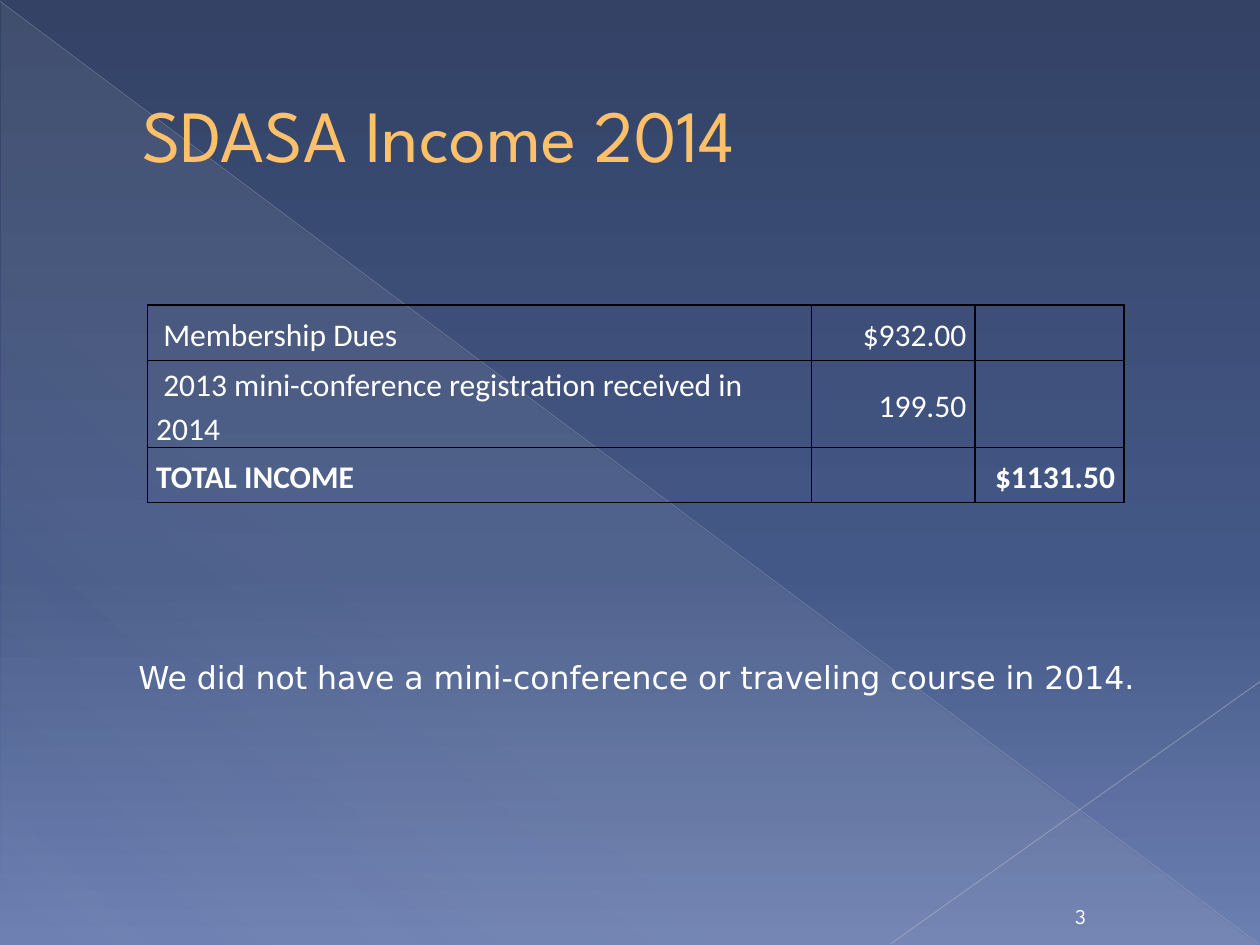
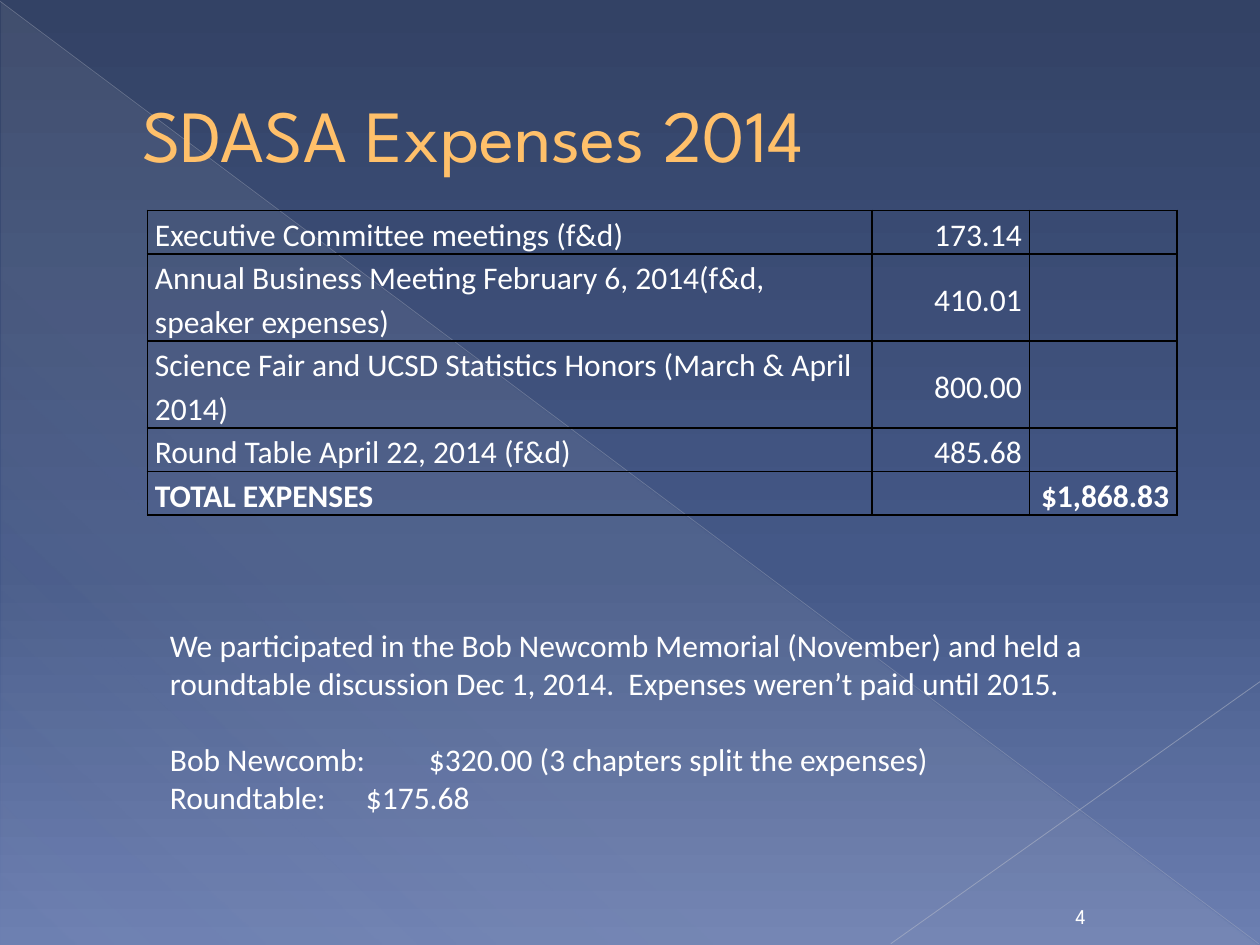
import dataclasses
import typing

import lxml.etree
import pptx
import pptx.dml.color
import pptx.enum.shapes
import pptx.enum.text
import pptx.oxml.ns
import pptx.util

Inches = pptx.util.Inches
Pt = pptx.util.Pt
qn = pptx.oxml.ns.qn
ALIGN = pptx.enum.text.PP_ALIGN
ANCHOR = pptx.enum.text.MSO_ANCHOR
COLORS = {
    "top": "334265", "mid": "445887", "base": "6C7FB1",
    "veil": "D4D4D6", "long": "B9BDC8", "short": "C1C4CE",
    "title": "FFC06A", "edge": "A67800", "text": "FFFFFF", "grid": "000000",
}
BODY, HEAD, NOTE = "Calibri", "League Spartan", "DejaVu Sans"


@dataclasses.dataclass
class Stop:
    place: int
    color: str
    alpha: int = 100


@dataclasses.dataclass
class Ray:
    start: tuple[float, float]
    end: tuple[float, float]
    color: str
    width: float
    alpha: int


@dataclasses.dataclass
class Grid:
    left: float
    top: float
    inset: float
    widths: list[float]
    heights: list[float]
    rows: list[tuple[str, str, str]]


@dataclasses.dataclass
class Note:
    box: tuple[float, float, float, float]
    font: str
    lines: list[str]
    gaps: dict[int, float] = dataclasses.field(default_factory=dict)


@dataclasses.dataclass
class Page:
    title: str
    number: int
    grid: Grid
    note: Note


SKY = [Stop(0, "top"), Stop(60, "mid"), Stop(100, "base")]
VEIL = [Stop(0, "veil", 10), Stop(70, "veil", 8), Stop(100, "veil", 1)]
RAYS = [
    Ray((0, 0.01), (9.99, 7.49), "long", 0.39, 35),
    Ray((10, 5.41), (7.07, 7.49), "short", 0.47, 45),
]

PAGES = [
    Page(
        "SDASA Income 2014", 3,
        Grid(1.17, 2.42, 0.07, [5.27, 1.3, 1.18], [0.44] * 3, [
            (" Membership Dues", "$932.00", ""),
            (" 2013 mini-conference registration received in 2014", "199.50", ""),
            ("TOTAL INCOME", "", "$1131.50"),
        ]),
        Note((1, 5.17, 8.24, 0.4), NOTE,
             ["We did not have a mini-conference or traveling course in 2014."]),
    ),
    Page(
        "SDASA Expenses 2014", 4,
        Grid(1.17, 1.67, 0.06, [5.75, 1.25, 1.17], [0.32, 0.58, 0.58, 0.32, 0.3], [
            ("Executive Committee meetings (f&d)", "173.14", ""),
            ("Annual Business Meeting February 6, 2014(f&d, speaker expenses)", "410.01", ""),
            ("Science Fair and UCSD Statistics Honors (March & April 2014)", "800.00", ""),
            ("Round Table April 22, 2014 (f&d)", "485.68", ""),
            ("TOTAL EXPENSES", "", "$1,868.83"),
        ]),
        Note((1.25, 4.92, 7.59, 1.62), BODY, [
            "We participated in the Bob Newcomb Memorial (November) and held a",
            "roundtable discussion Dec 1, 2014.  Expenses weren’t paid until 2015.",
            "Bob Newcomb:\t $320.00 (3 chapters split the expenses)",
            "Roundtable: \t $175.68",
        ], {2: 22}),
    ),
]


def rgb(name: str) -> pptx.dml.color.RGBColor:
    return pptx.dml.color.RGBColor.from_string(COLORS[name])


def add(root: typing.Any, tag: str, **attrs: object) -> typing.Any:
    return lxml.etree.SubElement(root, qn(tag), {k: str(v) for k, v in attrs.items()})


def tint(root: typing.Any, color: str, alpha: int = 100) -> None:
    node = add(root, "a:srgbClr", val=COLORS[color])
    if alpha < 100:
        add(node, "a:alpha", val=alpha * 1000)


def blend(fill: typing.Any, root: typing.Any, stops: list[Stop], angle: int) -> None:
    """Fill with a gradient of any number of stops."""
    fill.gradient()
    grad = root.find(".//" + qn("a:gradFill"))
    for child in list(grad):
        grad.remove(child)
    group = add(grad, "a:gsLst")
    for stop in stops:
        tint(add(group, "a:gs", pos=stop.place * 1000), stop.color, stop.alpha)
    add(grad, "a:lin", ang=angle * 60000, scaled=0)


def write(frame: typing.Any, lines: list[str], *, font: str = BODY, size: float = 18,
          color: str = "text", bold: bool = False, align: typing.Any = ALIGN.LEFT,
          anchor: typing.Any = ANCHOR.TOP, wrap: bool = True, space: float | None = None,
          gaps: dict[int, float] | None = None, edge: str = "") -> None:
    frame.word_wrap = wrap
    frame.vertical_anchor = anchor
    for i, line in enumerate(lines):
        para = frame.paragraphs[0] if i == 0 else frame.add_paragraph()
        para.alignment = align
        para.line_spacing = space
        if gaps and i in gaps:
            para.space_before = Pt(gaps[i])
        if not line:
            add(para._p, "a:endParaRPr", sz=int(size * 100))
            continue
        run = para.add_run()
        run.text = line
        run.font.name, run.font.size, run.font.bold = font, Pt(size), bold
        run.font.color.rgb = rgb(color)
        if edge:
            line_node = add(run.font._element, "a:ln", w=Pt(0.5))
            tint(add(line_node, "a:solidFill"), edge)
            run.font._element.insert(0, line_node)


def label(slide: typing.Any, box: tuple[float, float, float, float],
          lines: list[str], **style: typing.Any) -> typing.Any:
    shape = slide.shapes.add_textbox(*map(Inches, box))
    write(shape.text_frame, lines, **style)
    return shape


def draw_ray(slide: typing.Any, ray: Ray) -> None:
    line = slide.shapes.add_connector(
        pptx.enum.shapes.MSO_CONNECTOR.STRAIGHT, *map(Inches, ray.start + ray.end))
    line.line.width = Pt(ray.width)
    line.line.color.rgb = rgb(ray.color)
    add(line._element.spPr.find(".//" + qn("a:srgbClr")), "a:alpha", val=ray.alpha * 1000)
    add(line._element.spPr, "a:effectLst")


def draw_base(slide: typing.Any) -> None:
    blend(slide.background.fill, slide._element, SKY, 90)
    veil = slide.shapes.add_shape(
        pptx.enum.shapes.MSO_SHAPE.RIGHT_TRIANGLE, *map(Inches, (0.01, 0.02, 9.98, 7.48)))
    veil.shadow.inherit = False
    veil.line.fill.background()
    blend(veil.fill, veil._element.spPr, VEIL, 133)
    for ray in RAYS:
        draw_ray(slide, ray)


def draw_grid(slide: typing.Any, grid: Grid) -> None:
    table = slide.shapes.add_table(
        len(grid.rows), len(grid.widths), Inches(grid.left), Inches(grid.top),
        Inches(sum(grid.widths)), Inches(sum(grid.heights))).table
    table.first_row = table.horz_banding = False
    for col, width in zip(table.columns, grid.widths):
        col.width = Inches(width)
    for r, (row, height) in enumerate(zip(grid.rows, grid.heights)):
        table.rows[r].height = Inches(height)
        for c, text in enumerate(row):
            cell = table.cell(r, c)
            write(cell.text_frame, [text], space=1.15, bold=r == len(grid.rows) - 1,
                  align=ALIGN.RIGHT if c else ALIGN.LEFT)
            cell.vertical_anchor = ANCHOR.MIDDLE
            cell.margin_left = cell.margin_right = Inches(grid.inset)
            cell.margin_top = cell.margin_bottom = 0
            props = cell._tc.get_or_add_tcPr()
            for side in ("a:lnL", "a:lnR", "a:lnT", "a:lnB"):
                tint(add(add(props, side, w=Pt(1)), "a:solidFill"), "grid")
            cell.fill.background()


def draw_page(deck: typing.Any, page: Page) -> None:
    slide = deck.slides.add_slide(deck.slide_layouts[6])
    draw_base(slide)
    # Title, indented from the left
    title = label(slide, (0.5, 0.29, 9, 1.53), [page.title], font=HEAD, size=42,
                  color="title", anchor=ANCHOR.MIDDLE, edge="edge")
    title.text_frame.margin_left = Inches(0.63)
    # Figures and remark
    draw_grid(slide, page.grid)
    label(slide, page.note.box, page.note.lines, font=page.note.font,
          gaps=page.note.gaps, wrap=False)
    # Page number
    label(slide, (8.3, 7.09, 0.55, 0.33), [str(page.number)], font=HEAD, size=12,
          align=ALIGN.CENTER, anchor=ANCHOR.BOTTOM)


def main() -> None:
    deck = pptx.Presentation()
    deck.slide_width, deck.slide_height = Inches(10), Inches(7.5)
    for page in PAGES:
        draw_page(deck, page)
    deck.save("out.pptx")


if __name__ == "__main__":
    main()
